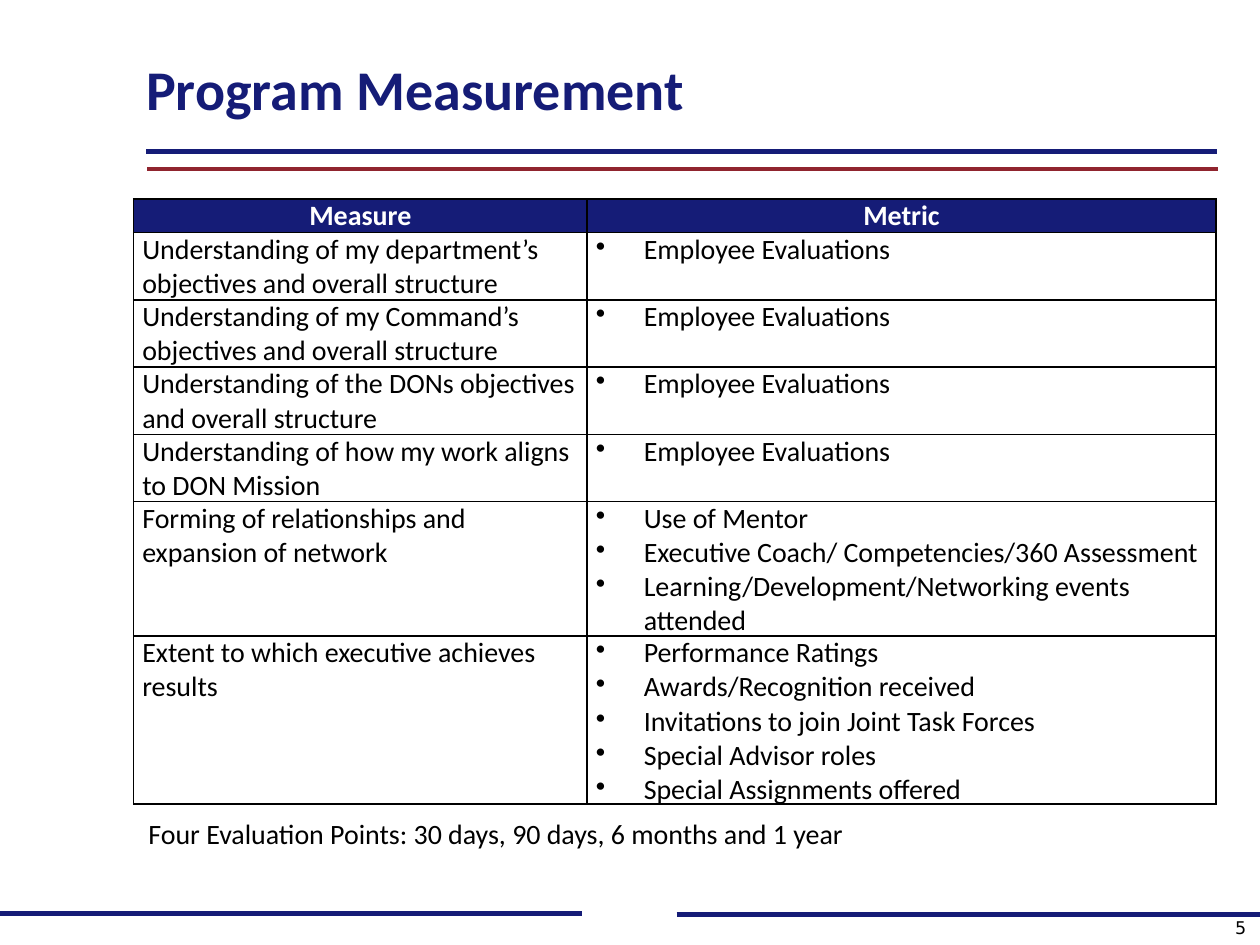
from dataclasses import dataclass

from lxml.etree import SubElement
from pptx import Presentation
from pptx.dml.color import RGBColor
from pptx.enum.shapes import MSO_CONNECTOR as Connector
from pptx.enum.text import MSO_ANCHOR as Anchor, MSO_AUTO_SIZE as AutoSize, PP_ALIGN as Align
from pptx.oxml.ns import qn
from pptx.util import Inches, Pt

TITLE = "Program Measurement"
HEADERS = ("Measure", "Metric")
EVALUATIONS = ["Employee Evaluations"]
MEASURES = [
    ("Understanding of my department’s objectives and overall structure", EVALUATIONS, 2),
    ("Understanding of my Command’s objectives and overall structure", EVALUATIONS, 2),
    ("Understanding of the DONs objectives and overall structure", EVALUATIONS, 2),
    ("Understanding of how my work aligns to DON Mission", EVALUATIONS, 2),
    ("Forming of relationships and expansion of network",
     ["Use of Mentor", "Executive Coach/ Competencies/360 Assessment",
      "Learning/Development/Networking events attended"], 4),
    ("Extent to which executive achieves results",
     ["Performance Ratings", "Awards/Recognition received",
      "Invitations to join Joint Task Forces", "Special Advisor roles",
      "Special Assignments offered"], 5),
]
EVALUATION_POINTS = "Four Evaluation Points: 30 days, 90 days, 6 months and 1 year"
PAGE_NUMBER = "5"


@dataclass(frozen=True)
class Theme:
    navy: str = "151C77"
    red: str = "90242E"
    black: str = "000000"
    white: str = "FFFFFF"
    font: str = "Calibri"
    number_font: str = "DejaVu Sans"
    title_size: int = 32
    body_size: int = 16
    number_size: int = 10


THEME = Theme()
RULES = [
    (1.16, 9.66, 1.2, THEME.navy, 3),
    (0, 4.62, 7.25, THEME.navy, 3),
    (5.37, 10, 7.26, THEME.navy, 3),
    (1.17, 9.67, 1.34, THEME.red, 2.5),
]
COLUMN_WIDTHS = (3.6, 4.99)
LINE_HEIGHT = 0.23
BULLET_INDENT = 0.38


def write(frame, lines, size=THEME.body_size, color=THEME.black, font=THEME.font,
          bold=False, align=Align.LEFT, bullet=False):
    for index, line in enumerate(lines):
        para = frame.add_paragraph() if index else frame.paragraphs[0]
        para.alignment = align
        if bullet:
            properties = para._p.get_or_add_pPr()
            properties.set("marL", str(Inches(BULLET_INDENT)))
            properties.set("indent", str(-Inches(BULLET_INDENT)))
            SubElement(properties, qn("a:buChar"), char="•")
        span = para.add_run()
        span.text = line
        span.font.name = font
        span.font.size = Pt(size)
        span.font.bold = bold
        span.font.color.rgb = RGBColor.from_string(color)


def add_rule(page, left, right, top, color, width):
    rule = page.shapes.add_connector(
        Connector.STRAIGHT, Inches(left), Inches(top), Inches(right), Inches(top))
    rule.line.color.rgb = RGBColor.from_string(color)
    rule.line.width = Pt(width)
    SubElement(rule._element.spPr, qn("a:effectLst"))


def add_text(page, place, text, anchor=Anchor.TOP, **style):
    box = page.shapes.add_textbox(*map(Inches, place))
    box.text_frame.word_wrap = True
    box.text_frame.vertical_anchor = anchor
    write(box.text_frame, [text], **style)
    return box


def fill_cell(cell, lines, fill=None, **style):
    cell.margin_left = cell.margin_right = Inches(0.07)
    cell.margin_top = cell.margin_bottom = 0
    properties = cell._tc.get_or_add_tcPr()
    for side in ("lnL", "lnR", "lnT", "lnB"):
        border = SubElement(properties, qn(f"a:{side}"), w=str(Pt(1)))
        SubElement(SubElement(border, qn("a:solidFill")), qn("a:srgbClr"), val=THEME.black)
    if fill:
        cell.fill.solid()
        cell.fill.fore_color.rgb = RGBColor.from_string(fill)
    else:
        cell.fill.background()
    write(cell.text_frame, lines, **style)


def add_measures(page):
    table = page.shapes.add_table(
        len(MEASURES) + 1, len(HEADERS), Inches(1.06), Inches(1.58),
        Inches(sum(COLUMN_WIDTHS)), Inches(4.8)).table
    table.horz_banding = False
    table.first_row = False
    for column, width in zip(table.columns, COLUMN_WIDTHS):
        column.width = Inches(width)
    line_counts = [1] + [lines for _, _, lines in MEASURES]
    for row, lines in zip(table.rows, line_counts):
        row.height = Inches(LINE_HEIGHT * lines)
    for column, header in enumerate(HEADERS):
        fill_cell(table.cell(0, column), [header], fill=THEME.navy,
                  color=THEME.white, bold=True, align=Align.CENTER)
    for row, (measure, metrics, _) in enumerate(MEASURES, 1):
        fill_cell(table.cell(row, 0), [measure])
        fill_cell(table.cell(row, 1), metrics, bullet=True)


def main():
    deck = Presentation()
    deck.slide_width, deck.slide_height = Inches(10), Inches(7.5)
    page = deck.slides.add_slide(deck.slide_layouts[5])

    for rule in RULES:
        add_rule(page, *rule)

    title = page.shapes.title
    title.left, title.top, title.width, title.height = map(Inches, (1.06, 0.24, 8.6, 0.92))
    title.text_frame.auto_size = AutoSize.NONE
    title.text_frame.vertical_anchor = Anchor.MIDDLE
    write(title.text_frame, [TITLE], size=THEME.title_size, color=THEME.navy, bold=True)

    add_text(page, (7.66, 6.97, 2.33, 0.52), PAGE_NUMBER, anchor=Anchor.BOTTOM,
             size=THEME.number_size, font=THEME.number_font, align=Align.RIGHT)
    add_measures(page)
    caption = add_text(page, (1.08, 6.43, 8.41, 0.37), EVALUATION_POINTS)
    caption.text_frame.auto_size = AutoSize.SHAPE_TO_FIT_TEXT

    deck.save("out.pptx")


if __name__ == "__main__":
    main()
